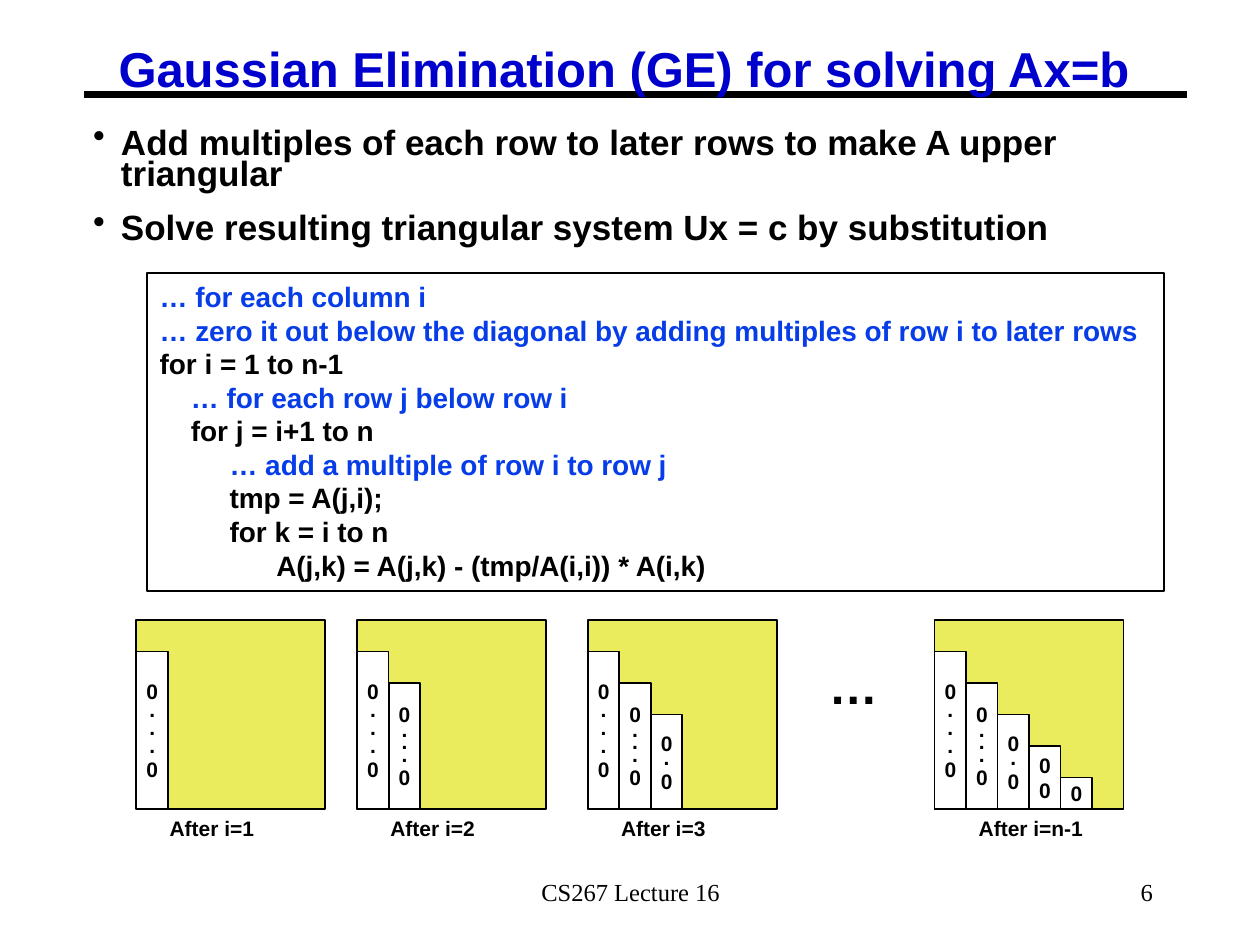
"""Build a slide explaining Gaussian elimination with pseudocode and matrix diagrams."""
from dataclasses import dataclass

from lxml import etree
from pptx import Presentation
from pptx.dml.color import RGBColor
from pptx.enum.shapes import MSO_CONNECTOR, MSO_SHAPE
from pptx.enum.text import MSO_ANCHOR, PP_ALIGN
from pptx.oxml.ns import qn
from pptx.shapes.autoshape import Shape
from pptx.shapes.shapetree import SlideShapes
from pptx.text.text import TextFrame
from pptx.util import Cm, Pt

LEFT, CENTER, RIGHT = PP_ALIGN.LEFT, PP_ALIGN.CENTER, PP_ALIGN.RIGHT
TOP, MIDDLE = MSO_ANCHOR.TOP, MSO_ANCHOR.MIDDLE
RECTANGLE = MSO_SHAPE.RECTANGLE
STRAIGHT = MSO_CONNECTOR.STRAIGHT


@dataclass(frozen=True)
class Theme:
    sans: str = "Arial"
    serif: str = "Times New Roman"
    black: RGBColor = RGBColor(0, 0, 0)
    white: RGBColor = RGBColor(255, 255, 255)
    title_blue: RGBColor = RGBColor(0x00, 0x00, 0xCC)
    comment_blue: RGBColor = RGBColor(0x06, 0x3D, 0xE8)
    matrix_yellow: RGBColor = RGBColor(0xEA, 0xEC, 0x5E)
    title_size: float = 28
    body_size: float = 20
    code_size: float = 16
    footer_size: float = 14
    small_size: float = 12
    outline: float = 1
    rule: float = 3.75


@dataclass(frozen=True)
class Box:
    left: float
    top: float
    width: float
    height: float


@dataclass(frozen=True)
class Line:
    text: str
    size: float
    color: RGBColor = RGBColor(0, 0, 0)
    align: PP_ALIGN = LEFT
    spacing: float = 1.0
    space_after: float = 0
    indent: float = 0
    hanging: float = 0
    font: str = "Arial"
    bold: bool = True


@dataclass(frozen=True)
class ZeroColumn:
    entries: str
    dot_spacing: float = 1.0


@dataclass(frozen=True)
class Matrix:
    left: float
    eliminated: int
    label: str
    label_offset: float = 0.42
    label_width: float = 2.26


THEME = Theme()
MATRIX_TOP = 12.5
MATRIX_SIDE = 3.81
CELL = MATRIX_SIDE / 6
CODE_STEPS = (0, 0.63, 1.41, 2.35)
ZERO_COLUMNS = (
    ZeroColumn("0...0", 0.7),
    ZeroColumn("0...0", 0.5),
    ZeroColumn("0.0", 0.5),
    ZeroColumn("00"),
    ZeroColumn("0"),
)
MATRICES = (
    Matrix(18.84, 5, "After i=n-1", 0.64, 2.67),
    Matrix(11.85, 3, "After i=3"),
    Matrix(7.2, 2, "After i=2"),
    Matrix(2.75, 1, "After i=1"),
)
BULLETS = (
    "Add multiples of each row to later rows to make A upper triangular",
    "Solve resulting triangular system Ux = c by substitution",
)
PSEUDOCODE = (
    (0, "… for each column i"),
    (0, "… zero it out below the diagonal by adding multiples of row i to later rows"),
    (0, "for i = 1 to n-1"),
    (1, "… for each row j below row i"),
    (1, "for j = i+1 to n"),
    (2, "… add a multiple of row i to row j"),
    (2, "tmp = A(j,i);"),
    (2, "for k = i to n"),
    (3, "A(j,k) = A(j,k) - (tmp/A(i,i)) * A(i,k)"),
)


def write(frame: TextFrame, lines: list[Line], anchor: MSO_ANCHOR = TOP, wrap: bool = False) -> None:
    """Fill a text frame with one paragraph per line."""
    frame.word_wrap = wrap
    frame.vertical_anchor = anchor
    for index, line in enumerate(lines):
        paragraph = frame.add_paragraph() if index else frame.paragraphs[0]
        paragraph.text = line.text
        paragraph.alignment = line.align
        paragraph.line_spacing = line.spacing
        paragraph.space_after = Pt(line.space_after)
        font = paragraph.font
        font.name, font.size, font.bold = line.font, Pt(line.size), line.bold
        font.color.rgb = line.color
        properties = paragraph._p.get_or_add_pPr()
        properties.set("marL", str(Cm(line.indent)))
        properties.set("indent", str(Cm(-line.hanging)))
        if line.hanging:
            bullet = etree.Element(qn("a:buChar"), char="•")
            properties.find(qn("a:defRPr")).addprevious(bullet)


def add_text(shapes: SlideShapes, box: Box, lines: list[Line], anchor: MSO_ANCHOR = TOP,
             wrap: bool = False, margins: tuple[float, float] = (0.25, 0.13)) -> None:
    """Add a text box with the given side and vertical margins."""
    frame = shapes.add_textbox(Cm(box.left), Cm(box.top), Cm(box.width), Cm(box.height)).text_frame
    frame.margin_left = frame.margin_right = Cm(margins[0])
    frame.margin_top = frame.margin_bottom = Cm(margins[1])
    write(frame, lines, anchor, wrap)


def add_rectangle(shapes: SlideShapes, box: Box, fill: RGBColor | None = None) -> Shape:
    """Add a thinly outlined rectangle, unfilled by default."""
    rectangle = shapes.add_shape(RECTANGLE, Cm(box.left), Cm(box.top), Cm(box.width), Cm(box.height))
    rectangle.shadow.inherit = False
    if fill is None:
        rectangle.fill.background()
    else:
        rectangle.fill.solid()
        rectangle.fill.fore_color.rgb = fill
    rectangle.line.color.rgb = THEME.black
    rectangle.line.width = Pt(THEME.outline)
    return rectangle


def add_title_rule(shapes: SlideShapes) -> None:
    """Draw the heavy rule under the title."""
    rule = shapes.add_connector(STRAIGHT, Cm(1.7), Cm(1.9), Cm(23.93), Cm(1.9))
    rule.line.color.rgb = THEME.black
    rule.line.width = Pt(THEME.rule)
    etree.SubElement(rule._element.spPr, qn("a:effectLst"))


def add_matrix(shapes: SlideShapes, matrix: Matrix) -> None:
    """Draw a matrix with its zeroed columns and caption."""
    bottom = MATRIX_TOP + MATRIX_SIDE
    add_rectangle(shapes, Box(matrix.left, MATRIX_TOP, MATRIX_SIDE, MATRIX_SIDE), THEME.matrix_yellow)
    for index, column in enumerate(ZERO_COLUMNS[:matrix.eliminated]):
        height = MATRIX_SIDE - (index + 1) * CELL
        zeros = add_rectangle(
            shapes, Box(matrix.left + index * CELL, bottom - height, CELL, height), THEME.white)
        write(zeros.text_frame, [
            Line(entry, THEME.small_size, align=CENTER,
                 spacing=column.dot_spacing if entry == "." else 1.0)
            for entry in column.entries], MIDDLE)
    add_text(shapes, Box(matrix.left + matrix.label_offset, bottom, matrix.label_width, 0.76),
             [Line(matrix.label, THEME.small_size)])


def main() -> None:
    """Compose and save the slide."""
    presentation = Presentation()
    presentation.slide_width, presentation.slide_height = Cm(25.4), Cm(19.05)
    shapes = presentation.slides.add_slide(presentation.slide_layouts[6]).shapes

    add_title_rule(shapes)
    for box, text, align in ((Box(8.69, 17.35, 8.05, 1.27), "CS267 Lecture 16", CENTER),
                             (Box(18.21, 17.35, 5.28, 1.27), "6", RIGHT)):
        add_text(shapes, box, [Line(text, THEME.footer_size, align=align, font=THEME.serif, bold=False)],
                 MIDDLE, wrap=True)
    add_text(shapes, Box(2.21, 0.86, 21, 1.22),
             [Line("Gaussian Elimination (GE) for solving Ax=b", THEME.title_size,
                   THEME.title_blue, spacing=0.87)], wrap=True, margins=(0.18, 0.08))
    add_text(shapes, Box(1.7, 2.54, 22.23, 2.67),
             [Line(text, THEME.body_size, spacing=0.75, space_after=13, indent=0.56, hanging=0.56)
              for text in BULLETS], wrap=True, margins=(0.18, 0.08))

    code = add_rectangle(shapes, Box(2.97, 5.51, 20.5, 6.4))
    write(code.text_frame, [
        Line(text, THEME.code_size, THEME.comment_blue if text.startswith("…") else THEME.black,
             indent=CODE_STEPS[level])
        for level, text in PSEUDOCODE])

    for matrix in MATRICES:
        add_matrix(shapes, matrix)
    add_text(shapes, Box(16.46, 13.08, 1.52, 1.45), [Line("…", THEME.title_size)])
    presentation.save("out.pptx")


if __name__ == "__main__":
    main()
